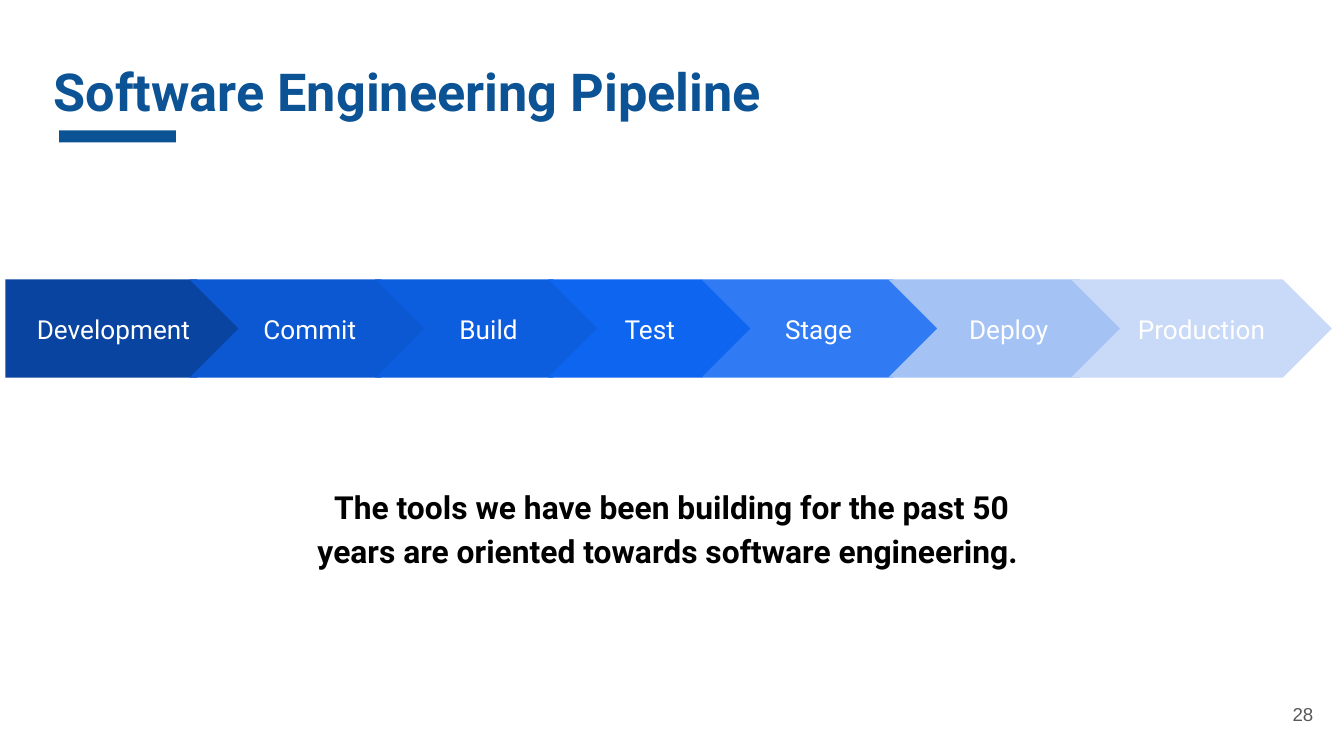
"""Build the software engineering pipeline slide."""
from dataclasses import dataclass

from pptx import Presentation
from pptx.dml.color import RGBColor
from pptx.enum.shapes import MSO_SHAPE
from pptx.enum.text import MSO_ANCHOR, PP_ALIGN
from pptx.shapes.autoshape import Shape
from pptx.slide import Slide
from pptx.util import Inches, Pt

RECTANGLE, PENTAGON, CHEVRON = MSO_SHAPE.RECTANGLE, MSO_SHAPE.PENTAGON, MSO_SHAPE.CHEVRON
TOP, MIDDLE = MSO_ANCHOR.TOP, MSO_ANCHOR.MIDDLE
LEFT, CENTER, RIGHT = PP_ALIGN.LEFT, PP_ALIGN.CENTER, PP_ALIGN.RIGHT

SLIDE_WIDTH = 10
SLIDE_HEIGHT = SLIDE_WIDTH * 9 / 16


@dataclass(frozen=True)
class Theme:
    heading: str = "0B5394"
    body: str = "000000"
    stage_label: str = "FFFFFF"
    page_number: str = "595959"
    font: str = "Roboto"
    number_font: str = "Arial"
    title_size: float = 28
    message_size: float = 17
    stage_size: float = 14
    number_size: float = 10


@dataclass(frozen=True)
class Box:
    left: float
    top: float
    width: float
    height: float

    def lengths(self) -> tuple[Inches, ...]:
        return tuple(Inches(value) for value in (self.left, self.top, self.width, self.height))


@dataclass(frozen=True)
class TextStyle:
    size: float
    color: str
    font: str
    bold: bool = False
    align: PP_ALIGN = CENTER
    anchor: MSO_ANCHOR = MIDDLE


@dataclass(frozen=True)
class Stage:
    label: str
    left: float
    color: str
    width: float = 1.79
    outline: MSO_SHAPE = CHEVRON


THEME = Theme()
TITLE_STYLE = TextStyle(THEME.title_size, THEME.heading, THEME.font, True, LEFT, TOP)
MESSAGE_STYLE = TextStyle(THEME.message_size, THEME.body, THEME.font, True)
STAGE_STYLE = TextStyle(THEME.stage_size, THEME.stage_label, THEME.font)
NUMBER_STYLE = TextStyle(THEME.number_size, THEME.page_number, THEME.number_font, align=RIGHT)

STAGE_TOP, STAGE_HEIGHT = 2.08, 0.73
STAGES = (
    Stage("Development", 0.04, "0944A1", outline=PENTAGON),
    Stage("Commit", 1.41, "0C58D3"),
    Stage("Build", 2.79, "0D5DDF", 1.69),
    Stage("Test", 4.08, "0E65F0", 1.51),
    Stage("Stage ", 5.22, "307BF3"),
    Stage("Deploy", 6.61, "A4C2F4"),
    Stage("Production", 7.97, "C9DAF8", 1.94),
)


def apply_format(target: object, values: dict[str, object]) -> None:
    for name, value in values.items():
        setattr(target, name, value)


def write_text(shape: Shape, text: str, style: TextStyle) -> None:
    frame = shape.text_frame
    margins = dict.fromkeys(
        ("margin_left", "margin_top", "margin_right", "margin_bottom"), Inches(0.1))
    apply_format(frame, {"word_wrap": True, "vertical_anchor": style.anchor, **margins})
    paragraph = frame.paragraphs[0]
    paragraph.alignment = style.align
    run = paragraph.add_run()
    run.text = text
    apply_format(run.font, {"name": style.font, "size": Pt(style.size), "bold": style.bold})
    run.font.color.rgb = RGBColor.from_string(style.color)


def add_text(slide: Slide, box: Box, text: str, style: TextStyle) -> Shape:
    shape = slide.shapes.add_textbox(*box.lengths())
    write_text(shape, text, style)
    return shape


def add_filled_shape(slide: Slide, outline: MSO_SHAPE, box: Box, color: str) -> Shape:
    shape = slide.shapes.add_shape(outline, *box.lengths())
    shape.shadow.inherit = False
    shape.fill.solid()
    shape.fill.fore_color.rgb = RGBColor.from_string(color)
    shape.line.fill.background()
    return shape


def add_stage(slide: Slide, stage: Stage) -> None:
    box = Box(stage.left, STAGE_TOP, stage.width, STAGE_HEIGHT)
    shape = add_filled_shape(slide, stage.outline, box, stage.color)
    shape.adjustments[0] = 0.5
    write_text(shape, stage.label, STAGE_STYLE)


def add_message(slide: Slide, text: str) -> None:
    shape = add_text(slide, Box(1.63, 3.31, 6.24, 1.21), text, MESSAGE_STYLE)
    paragraph = shape.text_frame.paragraphs[0]
    apply_format(paragraph, {"line_spacing": 1.15, "space_after": Pt(16)})
    properties = paragraph._p.get_or_add_pPr()
    properties.set("marL", str(Inches(0.5)))
    properties.set("indent", "0")


def main() -> None:
    presentation = Presentation()
    apply_format(presentation, {"slide_width": Inches(SLIDE_WIDTH),
                                "slide_height": Inches(SLIDE_HEIGHT)})
    slide = presentation.slides.add_slide(presentation.slide_layouts[6])
    add_text(slide, Box(0.3, 0.34, 9.32, 0.63), "Software Engineering Pipeline", TITLE_STYLE)
    add_filled_shape(slide, RECTANGLE, Box(0.44, 0.97, 0.87, 0.09), THEME.heading)
    add_message(slide, "The tools we have been building for the past 50 years "
                       "are oriented towards software engineering. ")
    for stage in STAGES:
        add_stage(slide, stage)
    add_text(slide, Box(9.27, 5.1, 0.6, 0.43), "28", NUMBER_STYLE)
    presentation.save("out.pptx")


if __name__ == "__main__":
    main()
